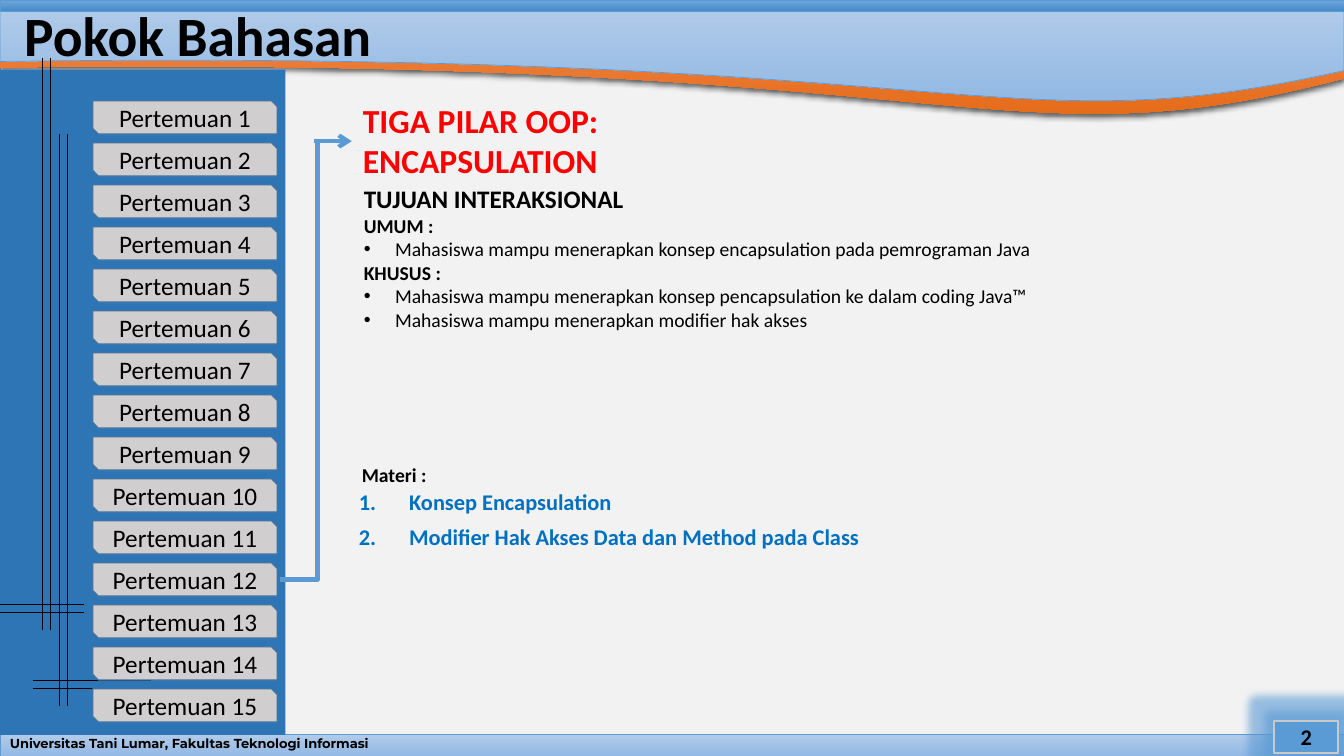
from lxml import etree
from pptx import Presentation
from pptx.dml.color import RGBColor
from pptx.enum import shapes as es, text as et
from pptx.oxml import ns
from pptx.util import Inches, Pt

HUES = {
    "black": "000000", "page": "F2F2F2", "edge": "A5A5A5", "blue": "5B9BD5",
    "sky": "B1CBE9", "haze": "93B9E4", "band": "71A6DB", "deep": "448ACA",
    "peach": "F18C57", "rust": "E56C19", "side": "2E75B6", "tab": "D0CECE",
    "rim": "43739E", "frame": "C9C9C9", "red": "FF0000", "topic": "0070C0",
}
KIND = es.MSO_SHAPE
MID = et.MSO_ANCHOR.MIDDLE
CENTER = et.PP_ALIGN.CENTER


def rgb(name):
    return RGBColor.from_string(HUES[name])


def node(home, tag, **attrs):
    return etree.SubElement(home, ns.qn(tag), attrs)


def paint(shape, fill, line=None, width=0.5):
    shape.shadow.inherit = False
    if isinstance(fill, tuple):
        shape.fill.gradient()
        shape.fill.gradient_angle = 270
        for stop, name in zip(shape.fill.gradient_stops, fill):
            stop.color.rgb = rgb(name)
    else:
        shape.fill.solid()
        shape.fill.fore_color.rgb = rgb(fill)
    if line:
        shape.line.color.rgb = rgb(line)
        shape.line.width = Pt(width)
    else:
        shape.line.fill.background()


def block(slide, box, fill, line=None, width=0.5, kind=KIND.RECTANGLE):
    shape = slide.shapes.add_shape(kind, *map(Inches, box))
    paint(shape, fill, line, width)
    return shape


def effect(shape, tag, hue, alpha, **attrs):
    home = shape._element.spPr.find(ns.qn("a:effectLst"))
    color = node(node(home, tag, **attrs), "a:srgbClr", val=HUES[hue])
    node(color, "a:alpha", val=str(alpha * 1000))


def write(para, words, size, hue="black", bold=False, face="Calibri"):
    run = para.add_run()
    run.text = words
    run.font.size = Pt(size)
    run.font.name = face
    run.font.bold = bold
    run.font.color.rgb = rgb(hue)


def label(shape, words, size, bold=False):
    frame = shape.text_frame
    frame.vertical_anchor = MID
    frame.paragraphs[0].alignment = CENTER
    write(frame.paragraphs[0], words, size, bold=bold)


def note(slide, box, rows, wrap=True):
    frame = slide.shapes.add_textbox(*map(Inches, box)).text_frame
    frame.word_wrap = wrap
    for i, (words, size, hue, bold, mark) in enumerate(rows):
        para = frame.add_paragraph() if i else frame.paragraphs[0]
        write(para, words, size, hue, bold)
        if mark:
            indent(para, mark)
    return frame


def indent(para, mark):
    props = para._p.get_or_add_pPr()
    gap = Inches(0.5 if mark == "1." else 0.31)
    props.set("marL", str(gap))
    props.set("indent", str(-gap))
    if mark == "1.":
        para.space_before = Pt(6)
        node(props, "a:buFont", typeface="+mj-lt")
        node(props, "a:buAutoNum", type="arabicPeriod")
    else:
        node(props, "a:buFont", typeface="Arial")
        node(props, "a:buChar", char=mark)


def link(slide, ends, hue="black", width=0.5, kind=es.MSO_CONNECTOR.STRAIGHT):
    line = slide.shapes.add_connector(kind, *map(Inches, ends))
    line.line.color.rgb = rgb(hue)
    line.line.width = Pt(width)
    node(line._element.spPr, "a:effectLst")
    return line


def wave(slide, top, left, low, right, fill, line=None):
    curve = [(0, left), (9.76, left - 0.135), (9.86, low), (13.33, right)]
    spots = [(0, top)]
    for i in range(61):
        t = i / 60
        parts = ((1 - t) ** 3, 3 * t * (1 - t) ** 2, 3 * t * t * (1 - t), t ** 3)
        spots.append([sum(w * p[k] for w, p in zip(parts, curve)) for k in (0, 1)])
    spots = [(Inches(x), Inches(y)) for x, y in spots]
    pen = slide.shapes.build_freeform(Inches(13.33), Inches(top))
    pen.add_line_segments(spots, close=True)
    shape = pen.convert_to_shape()
    paint(shape, fill, line)
    return shape


def frame(slide, wide, high):
    block(slide, (0, 0.04, wide, high - 0.04), "page", "edge")
    swoop = wave(slide, 0.01, 0.67, 1.68, 0.78, ("peach", "rust"))
    effect(swoop, "a:outerShdw", "black", 63, blurRad=str(Pt(4.5)),
           dist=str(Pt(1.5)), dir="5400000", rotWithShape="0")
    wave(slide, 0.04, 0.61, 1.48, 0.7, ("sky", "haze"), "blue")
    foot = block(slide, (0, high - 0.21, wide, 0.21), ("sky", "haze"), "blue")
    block(slide, (0, 0, wide, 0.11), ("band", "deep"), "blue")
    foot.text_frame.vertical_anchor = MID
    para = foot.text_frame.paragraphs[0]
    para.alignment = et.PP_ALIGN.LEFT
    para.line_spacing = 0.7
    write(para, "Universitas Tani Lumar, Fakultas Teknologi Informasi", 9.3,
          bold=True, face="Montserrat")
    page = block(slide, (wide - 0.69, high - 0.35, 0.63, 0.32), "blue", "frame", 1.5)
    effect(page, "a:glow", "blue", 60, rad=str(Pt(12)))
    label(page, "2", 16, True)


def heading(slide, box):
    title = slide.shapes.title
    title.left, title.top, title.width, title.height = map(Inches, box)
    title.text_frame.vertical_anchor = MID
    para = title.text_frame.paragraphs[0]
    para.alignment = et.PP_ALIGN.LEFT
    para.line_spacing = 0.9
    write(para, "Pokok Bahasan", 39.6, bold=True)
    slide.shapes._spTree.append(title._element)


def sidebar(slide, left, top, wide, high):
    block(slide, (left, top, wide, high), "side")
    for x, y in ((0.42, 0.58), (0.5, 0.58), (0.585, 1.33), (0.67, 1.33)):
        link(slide, (left + x, y, left + x, y + 5.67))
    for x, y, span in ((0.33, 6.75, 1.17), (0.33, 6.83, 1.17), (0, 6.08, 0.83), (0, 6, 0.83)):
        link(slide, (left + x, y, left + x + span, y))
    for i in range(15):
        box = (left + 0.92, top + 0.31 + i * 5 / 12, 1.83, 0.33)
        tab = block(slide, box, "tab", "rim", 1, KIND.SNIP_2_DIAG_RECTANGLE)
        label(tab, f"Pertemuan {i + 1}", 18)


def pointer(slide, left, top, wide, high):
    bend = left + 0.37
    elbow = link(slide, (left, top + high, bend, top), "blue", 3, es.MSO_CONNECTOR.ELBOW)
    guides = elbow._element.spPr.find(".//" + ns.qn("a:avLst"))
    node(guides, "a:gd", name="adj1", fmla="val 100000")
    arrow = link(slide, (bend - 0.04, top, left + wide, top), "blue", 3)
    node(arrow.line._get_or_add_ln(), "a:tailEnd", type="arrow")


def content(slide, left, top):
    note(slide, (left, top, 7.27, 0.91), [
        ("TIGA PILAR OOP:", 24, "red", True, None),
        ("ENCAPSULATION", 24, "red", True, None),
    ])
    note(slide, (left - 0.04, top + 3.85, 6.42, 0.72), [
        ("Konsep Encapsulation", 16, "topic", True, "1."),
        ("Modifier Hak Akses Data dan Method pada Class", 16, "topic", True, "1."),
    ])
    note(slide, (left + 0.01, top + 0.83, 6.96, 1.58), [
        ("TUJUAN INTERAKSIONAL", 18, "black", True, None),
        ("UMUM :", 14, "black", True, None),
        ("Mahasiswa mampu menerapkan konsep encapsulation pada pemrograman Java",
         14, "black", False, "•"),
        ("KHUSUS :", 14, "black", True, None),
        ("Mahasiswa mampu menerapkan konsep pencapsulation ke dalam coding Java™",
         14, "black", False, "•"),
        ("Mahasiswa mampu menerapkan modifier hak akses", 14, "black", False, "•"),
    ], wrap=False)
    note(slide, (left - 0.01, top + 3.6, 0.85, 0.34),
         [("Materi :", 14, "black", True, None)], wrap=False)


def main():
    deck = Presentation()
    deck.slide_width, deck.slide_height = Inches(13.33), Inches(7.5)
    slide = deck.slides.add_slide(deck.slide_layouts[5])
    frame(slide, 13.33, 7.5)
    heading(slide, (0.14, 0.08, 12.69, 0.61))
    sidebar(slide, 0, 0.69, 2.83, 6.6)
    pointer(slide, 2.78, 1.4, 0.71, 4.35)
    content(slide, 3.5, 0.94)
    deck.save("out.pptx")


if __name__ == "__main__":
    main()
